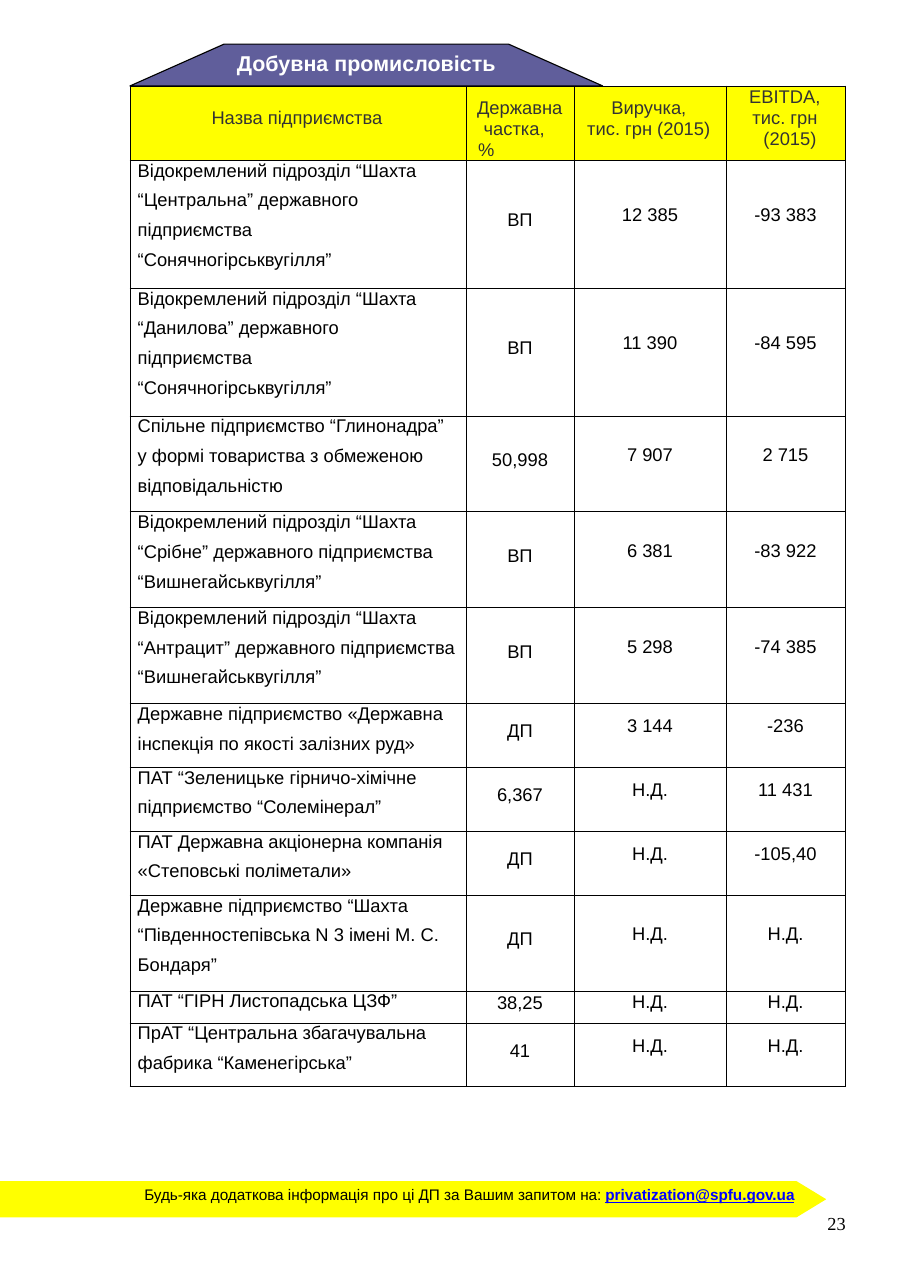
from lxml.etree import SubElement
from pptx import Presentation
from pptx.dml.color import RGBColor
from pptx.enum.shapes import MSO_SHAPE
from pptx.enum.text import MSO_ANCHOR, PP_ALIGN
from pptx.oxml.ns import qn
from pptx.util import Inches, Pt

WIDTH, HEIGHT = 8.26, 11.69
COLORS = {"yellow": "FFFF00", "violet": "605E9B", "dark": "333333",
          "black": "000000", "white": "FFFFFF", "link": "0000FF"}

TITLE = "Добувна промисловість"
FOOTER = "Будь-яка додаткова інформація про ці ДП за Вашим запитом на: "
EMAIL = "privatization@spfu.gov.ua"
PAGE = "23"

# Header cells: top margin, then lines with their left indents
HEADERS = [
    (0.19, [("Назва підприємства", 0.74)]),
    (0.1, [("Державна", 0.1), ("частка,", 0.16), ("%", 0.11)]),
    (0.1, [("Виручка,", 0.34), ("тис. грн (2015)", 0.12)]),
    (0, [("EBITDA,", 0.21), ("тис. грн", 0.24), ("(2015)", 0.34)]),
]
NO_DATA = "Н.Д."
# Lines of the name, state share, revenue, EBITDA
ENTERPRISES = [
    (["Відокремлений підрозділ “Шахта", "“Центральна” державного",
      "підприємства", "“Сонячногірськвугілля”"], "ВП", "12 385", "-93 383"),
    (["Відокремлений підрозділ “Шахта", "“Данилова” державного",
      "підприємства", "“Сонячногірськвугілля”"], "ВП", "11 390", "-84 595"),
    (["Спільне підприємство “Глинонадра”", "у формі товариства з обмеженою",
      "відповідальністю"], "50,998", "7 907", "2 715"),
    (["Відокремлений підрозділ “Шахта", "“Срібне” державного підприємства",
      "“Вишнегайськвугілля”"], "ВП", "6 381", "-83 922"),
    (["Відокремлений підрозділ “Шахта", "“Антрацит” державного підприємства",
      "“Вишнегайськвугілля”"], "ВП", "5 298", "-74 385"),
    (["Державне підприємство «Державна", "інспекція по якості залізних руд»"],
     "ДП", "3 144", "-236"),
    (["ПАТ “Зеленицьке гірничо-хімічне", "підприємство “Солемінерал”"],
     "6,367", NO_DATA, "11 431"),
    (["ПАТ Державна акціонерна компанія", "«Степовські поліметали»"],
     "ДП", NO_DATA, "-105,40"),
    (["Державне підприємство “Шахта", "“Південностепівська N 3 імені М. С.",
      "Бондаря”"], "ДП", NO_DATA, NO_DATA),
    (["ПАТ “ГІРН Листопадська ЦЗФ”"], "38,25", NO_DATA, NO_DATA),
    (["ПрАТ “Центральна збагачувальна", "фабрика “Каменегірська”"],
     "41", NO_DATA, NO_DATA),
]

LEFT, TABLE_TOP = 1.18, 0.78
COLUMNS = [3.05, 0.98, 1.38, 1.08]
HEADER_ROW, LINE_ROW = 0.67, 0.29
LIFT = [0.07, 0.16, 0.16]  # bottom margins that raise the figures


def rgb(name):
    return RGBColor.from_string(COLORS[name])


def style(font, size, color="black", bold=False, name="Arial"):
    font.size, font.bold, font.name = Pt(size), bold, name
    font.color.rgb = rgb(color)


def add_block(s, preset, box, fill, adjustment, line=None):
    sp = s.shapes.add_shape(preset, *map(Inches, box))
    sp.shadow.inherit = False
    sp.adjustments[0] = adjustment
    sp.fill.solid()
    sp.fill.fore_color.rgb = rgb(fill)
    if line:
        sp.line.color.rgb = rgb(line)
        sp.line.width = Pt(0.75)
    else:
        sp.line.fill.background()


def add_text(s, text, box, size, **look):
    tf = s.shapes.add_textbox(*map(Inches, box)).text_frame
    tf.margin_left = tf.margin_top = tf.margin_right = tf.margin_bottom = 0
    tf.word_wrap = True
    p = tf.paragraphs[0]
    p.add_run().text = text
    style(p.font, size, **look)
    return p


def prepare_cell(cell, fill=None):
    """Zero margins, thin black borders and an optional fill."""
    cell.margin_left = cell.margin_right = cell.margin_top = cell.margin_bottom = 0
    tcPr = cell._tc.get_or_add_tcPr()
    for side in ("a:lnL", "a:lnR", "a:lnT", "a:lnB"):
        ln = SubElement(tcPr, qn(side), w=str(Pt(0.48)))
        SubElement(SubElement(ln, qn("a:solidFill")), qn("a:srgbClr"),
                   val=COLORS["black"])
    if fill:
        cell.fill.solid()
        cell.fill.fore_color.rgb = rgb(fill)
    else:
        cell.fill.background()


def write_lines(cell, lines, spacing, color="black"):
    """One paragraph per (text, indent); spacing gives each line's height."""
    tf = cell.text_frame
    for i, (text, indent) in enumerate(lines):
        p = tf.add_paragraph() if i else tf.paragraphs[0]
        p.text = text
        p.line_spacing = Pt(spacing[min(i, 1)])
        p._p.get_or_add_pPr().set("marL", str(Inches(indent)))
        style(p.font, 12, color)


def add_enterprises(s):
    heights = [HEADER_ROW] + [LINE_ROW * len(e[0]) for e in ENTERPRISES]
    box = (LEFT, TABLE_TOP, sum(COLUMNS), sum(heights))
    table = s.shapes.add_table(len(heights), len(COLUMNS),
                               *map(Inches, box)).table
    table.first_row = table.horz_banding = False
    for column, width in zip(table.columns, COLUMNS):
        column.width = Inches(width)
    for row, height in zip(table.rows, heights):
        row.height = Inches(height)

    for c, (top, lines) in enumerate(HEADERS):
        cell = table.cell(0, c)
        prepare_cell(cell, "yellow")
        cell.margin_top = Inches(top)
        write_lines(cell, lines, (13.8, 13.8), "dark")

    for r, (name, *figures) in enumerate(ENTERPRISES, 1):
        cell = table.cell(r, 0)
        prepare_cell(cell)
        write_lines(cell, [(line, 0.07) for line in name], (13.6, 19.4))
        for c, (figure, lift) in enumerate(zip(figures, LIFT), 1):
            cell = table.cell(r, c)
            prepare_cell(cell)
            cell.vertical_anchor = MSO_ANCHOR.MIDDLE
            cell.margin_bottom = Inches(min(lift, 0.08 * len(name)))
            p = cell.text_frame.paragraphs[0]
            p.text = figure
            p.alignment = PP_ALIGN.CENTER
            style(p.font, 12)


def main():
    prs = Presentation()
    prs.slide_width, prs.slide_height = Inches(WIDTH), Inches(HEIGHT)
    s = prs.slides.add_slide(prs.slide_layouts[6])

    add_block(s, MSO_SHAPE.PENTAGON, (0, 10.72, 7.5, 0.33), "yellow", 0.82)
    add_enterprises(s)
    add_block(s, MSO_SHAPE.TRAPEZOID, (LEFT, 0.4, 4.29, 0.38),
              "violet", 2.25, line="black")
    add_text(s, TITLE, (2.15, 0.45, 2.5, 0.25), 14, color="white", bold=True)

    p = add_text(s, FOOTER, (1.31, 10.76, 6.1, 0.18), 10)
    r = p.add_run()
    r.text = EMAIL
    style(r.font, 10, "link", bold=True)
    r.font.underline = True

    add_text(s, PAGE, (7.51, 11, 0.22, 0.21), 12, name="Times New Roman")
    prs.save("out.pptx")


if __name__ == "__main__":
    main()
